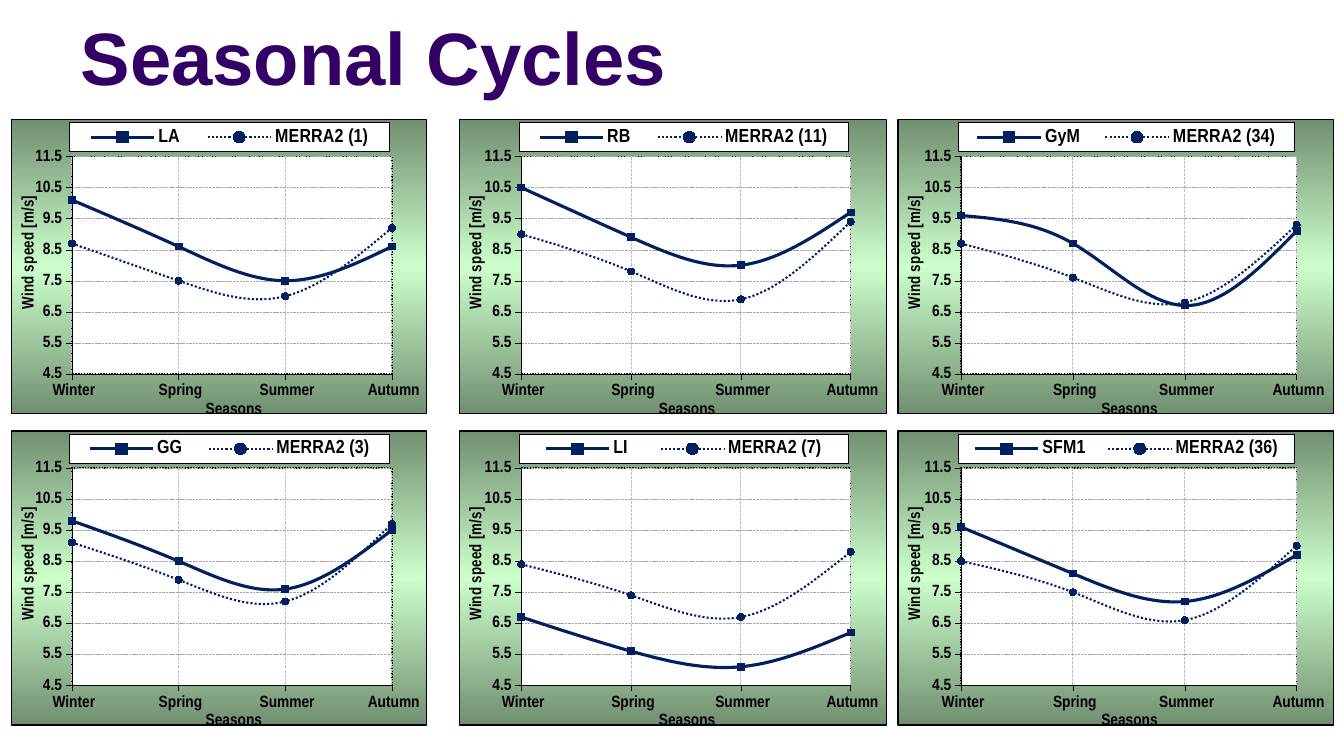
from pptx import Presentation
from pptx.chart.data import CategoryChartData
from pptx.dml.color import RGBColor
from pptx.enum.chart import XL_CHART_TYPE as ChartType, XL_LEGEND_POSITION as LegendPos
from pptx.enum.chart import XL_MARKER_STYLE as Marker, XL_TICK_MARK as Tick
from pptx.enum.dml import MSO_LINE
from pptx.enum.text import MSO_ANCHOR
from pptx.oxml import parse_xml
from pptx.oxml.ns import nsdecls, qn
from pptx.util import Inches, Pt

PURPLE = RGBColor(0x33, 0x00, 0x66)
NAVY = RGBColor(0x00, 0x20, 0x60)
BLACK = RGBColor(0x00, 0x00, 0x00)
WHITE = RGBColor(0xFF, 0xFF, 0xFF)
GRID_X = RGBColor(0xBF, 0xBF, 0xBF)
GRID_Y = RGBColor(0xA6, 0xA6, 0xA6)
EDGE_GREEN = RGBColor(0x72, 0x8F, 0x72)
MID_GREEN = RGBColor(0xCC, 0xFF, 0xCC)

COLUMNS = [(0.11, 4.13), (4.55, 4.25), (8.9, 4.33)]  # left, width
ROW_TOPS = [1.18, 4.27]
CHART_HEIGHT = 3.01
SEASONS = [" Winter", " Spring", " Summer", " Autumn"]

# station, its values, reanalysis grid point, its values
STATIONS = [
    ("LA", (10.1, 8.6, 7.5, 8.6), 1, (8.7, 7.5, 7, 9.2)),
    ("RB", (10.5, 8.9, 8, 9.7), 11, (9, 7.8, 6.9, 9.4)),
    ("GyM", (9.6, 8.7, 6.7, 9.1), 34, (8.7, 7.6, 6.8, 9.3)),
    ("GG", (9.8, 8.5, 7.6, 9.5), 3, (9.1, 7.9, 7.2, 9.7)),
    ("LI", (6.7, 5.6, 5.1, 6.2), 7, (8.4, 7.4, 6.7, 8.8)),
    ("SFM1", (9.6, 8.1, 7.2, 8.7), 36, (8.5, 7.5, 6.6, 9)),
]


def style_font(font, size, name="Arial Narrow", color=BLACK):
    font.size, font.name, font.bold = Pt(size), name, True
    font.color.rgb = color


def style_line(line, color, width, dash=None):
    line.color.rgb, line.width = color, Pt(width)
    if dash:
        line.dash_style = dash


def solid(color):
    return f'<a:solidFill><a:srgbClr val="{color}"/></a:solidFill>'


def vertical_gradient(*colors):
    stops = "".join(
        f'<a:gs pos="{i * 100000 // (len(colors) - 1)}"><a:srgbClr val="{c}"/></a:gs>'
        for i, c in enumerate(colors))
    return f'<a:gradFill><a:gsLst>{stops}</a:gsLst><a:lin ang="5400000" scaled="0"/></a:gradFill>'


def area_format(fill, width, dash="solid"):
    """Shape properties of a chart part: a fill and a black outline."""
    return parse_xml(
        f'<c:spPr {nsdecls("c", "a")}>{fill}<a:ln w="{Pt(width)}">{solid(BLACK)}'
        f'<a:prstDash val="{dash}"/></a:ln></c:spPr>')


def set_layout(parent, index, x, y, w=None, h=None, inner=False):
    """Fix a chart part at shares of the chart's size."""
    for old in parent.findall(qn("c:layout")):
        parent.remove(old)
    target = '<c:layoutTarget val="inner"/>' if inner else ""
    sizes = "" if w is None else f'<c:w val="{w}"/><c:h val="{h}"/>'
    parent.insert(index, parse_xml(
        f'<c:layout {nsdecls("c")}><c:manualLayout>{target}<c:xMode val="edge"/>'
        f'<c:yMode val="edge"/><c:x val="{x}"/><c:y val="{y}"/>{sizes}'
        '</c:manualLayout></c:layout>'))


def style_axis(axis, title, x, y, rotation, grid_color, grid_width):
    axis.major_tick_mark, axis.minor_tick_mark = Tick.OUTSIDE, Tick.NONE
    style_line(axis.format.line, BLACK, 0.25)
    style_font(axis.tick_labels.font, 12)
    axis.has_major_gridlines = True
    style_line(axis.major_gridlines.format.line, grid_color, grid_width, MSO_LINE.SQUARE_DOT)
    r = axis.axis_title.text_frame.paragraphs[0].add_run()
    r.text = title
    style_font(r.font, 12)
    element = axis.axis_title._element
    element.xpath(".//a:bodyPr")[0].set("rot", str(rotation))
    set_layout(element, 1, x, y)


def start_on_axis(axis):
    """Put the first and last category on the edges of the plot."""
    for old in axis._element.findall(qn("c:crossBetween")):
        axis._element.remove(old)
    axis._element.find(qn("c:crosses")).addnext(
        parse_xml(f'<c:crossBetween {nsdecls("c")} val="midCat"/>'))


def style_series(series, marker, width, dash=None):
    series.smooth = True
    style_line(series.format.line, NAVY, width, dash)
    series.marker.style, series.marker.size = marker, 5
    series.marker.format.fill.solid()
    series.marker.format.fill.fore_color.rgb = NAVY
    series.marker.format.line.color.rgb = NAVY


def add_legend(chart):
    chart.has_legend = True
    legend = chart.legend
    legend.position, legend.include_in_layout = LegendPos.TOP, False
    style_font(legend.font, 14)
    set_layout(legend._element, 1, 0.14, 0.01, 0.77, 0.1)
    legend._element.find(qn("c:overlay")).addnext(area_format(solid(WHITE), 0.75))


def add_season_chart(s, box, station, observed, point, modelled):
    data = CategoryChartData(number_format="0.0")
    data.categories = SEASONS
    data.add_series(station, observed)
    data.add_series(f"MERRA2 ({point})", modelled)
    chart = s.shapes.add_chart(ChartType.LINE_MARKERS, *map(Inches, box), data).chart
    chart.has_title = False
    chart.font.size, chart.font.name = Pt(10.5), "Arial"
    chart.plots[0].vary_by_categories = False
    station_line, model_line = chart.plots[0].series
    style_series(station_line, Marker.SQUARE, 2.25)
    style_series(model_line, Marker.CIRCLE, 1.5, MSO_LINE.ROUND_DOT)

    style_axis(chart.category_axis, "Seasons", 0.46, 0.945, 0, GRID_X, 0.75)
    speed = chart.value_axis
    style_axis(speed, "Wind speed [m/s]", 0.01, 0.26, -5400000, GRID_Y, 0.25)
    speed.minimum_scale, speed.maximum_scale, speed.major_unit = 4.5, 11.5, 1
    speed.tick_labels.number_format = "#,##0.0"
    speed.tick_labels.number_format_is_linked = False
    start_on_axis(speed)
    add_legend(chart)

    space = chart._chartSpace
    plot_area = space.chart.plotArea
    set_layout(plot_area, 0, 0.145, 0.126, 0.771, 0.74, inner=True)
    plot_area.append(area_format(solid(WHITE), 1, "sysDot"))
    gradient = vertical_gradient(EDGE_GREEN, MID_GREEN, EDGE_GREEN)
    space.chart.addnext(area_format(gradient, 1))


def add_title(s, box, text):
    tf = s.shapes.add_textbox(*map(Inches, box)).text_frame
    tf.word_wrap, tf.vertical_anchor = True, MSO_ANCHOR.MIDDLE
    tf.margin_left = tf.margin_right = Inches(0.13)
    tf.margin_top = tf.margin_bottom = Inches(0.07)
    r = tf.paragraphs[0].add_run()
    r.text = text
    style_font(r.font, 53, "Arial", PURPLE)


def main():
    prs = Presentation()
    prs.slide_width, prs.slide_height = Inches(13.33), Inches(7.5)
    s = prs.slides.add_slide(prs.slide_layouts[6])
    add_title(s, (0.67, 0, 12, 1.1), "Seasonal Cycles")
    for i, station in enumerate(STATIONS):
        row, column = divmod(i, len(COLUMNS))
        left, width = COLUMNS[column]
        add_season_chart(s, (left, ROW_TOPS[row], width, CHART_HEIGHT), *station)
    prs.save("out.pptx")


if __name__ == "__main__":
    main()
